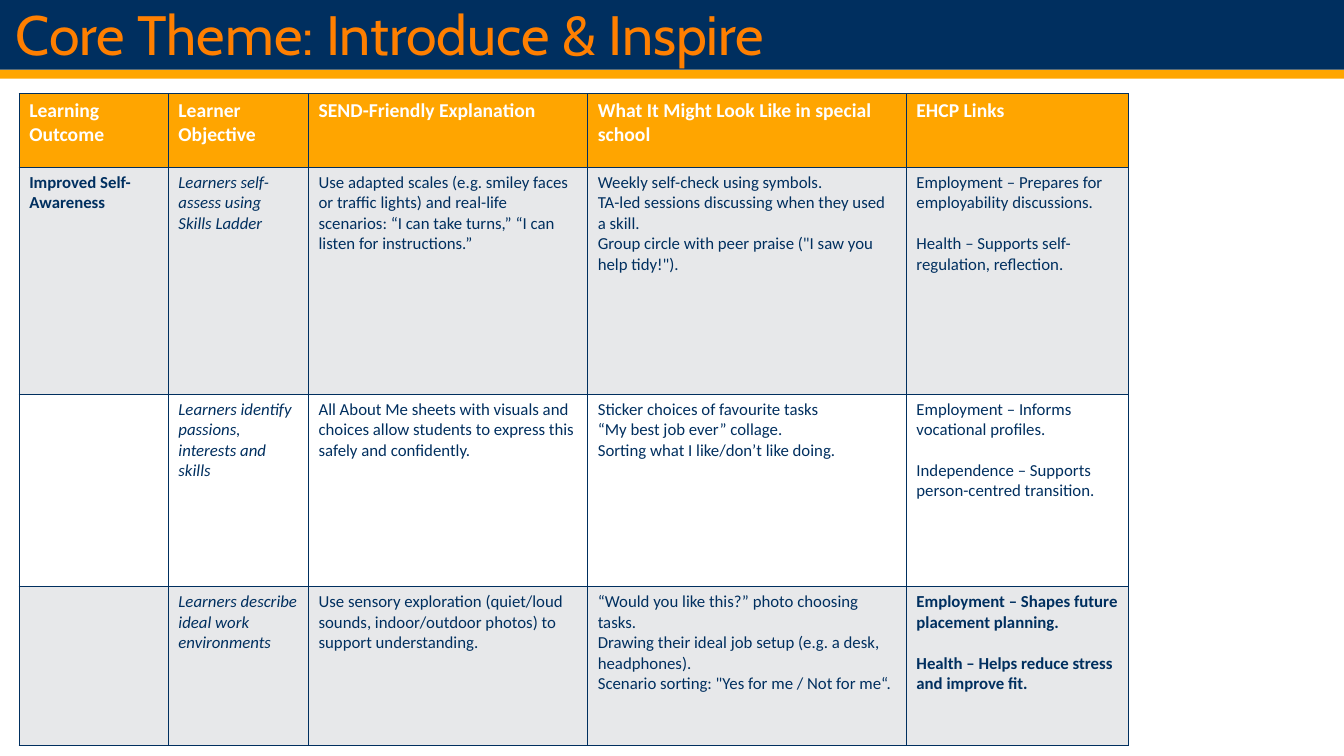
from lxml import etree
from pptx import Presentation
from pptx.dml.color import RGBColor
from pptx.enum.shapes import MSO_SHAPE
from pptx.enum.text import MSO_ANCHOR
from pptx.oxml.ns import qn
from pptx.util import Inches, Pt

RECTANGLE = MSO_SHAPE.RECTANGLE
MIDDLE = MSO_ANCHOR.MIDDLE
NAVY, ORANGE, TITLE_ORANGE = "002F5F", "FFA500", "FF7F00"
WHITE, GREY = "FFFFFF", "E7E8EA"


def color(hex_string):
    return RGBColor.from_string(hex_string)


def format_font(font, values):
    for name, value in values.items():
        if name == "color":
            font.color.rgb = color(value)
        else:
            setattr(font, name, value)


presentation = Presentation()
presentation.slide_width = Inches(13.33)
presentation.slide_height = Inches(7.5)
slide = presentation.slides.add_slide(presentation.slide_layouts[6])

# Header bands
for top, height, fill in [(0.69, 0.09, ORANGE), (0, 0.69, NAVY)]:
    band = slide.shapes.add_shape(
        RECTANGLE, 0, Inches(top), Inches(13.33), Inches(height))
    band.shadow.inherit = False
    band.fill.solid()
    band.fill.fore_color.rgb = color(fill)
    band.line.fill.background()

# Title
title = slide.shapes.add_textbox(
    Inches(0.06), Inches(0.12), Inches(11.53), Inches(0.5))
title.text_frame.word_wrap = True
title.text_frame.vertical_anchor = MIDDLE
paragraph = title.text_frame.paragraphs[0]
paragraph.text = "Core Theme: Introduce & Inspire"
paragraph.line_spacing = 0.9
format_font(paragraph.font,
            {"size": Pt(39.6), "name": "Cabin", "color": TITLE_ORANGE})

# Table content: one list per row, one line per paragraph
rows = [
    ["Learning Outcome", "Learner Objective", "SEND-Friendly Explanation",
     "What It Might Look Like in special school", "EHCP Links"],
    ["Improved Self-Awareness",
     "Learners self-assess using Skills Ladder",
     "Use adapted scales (e.g. smiley faces or traffic lights) and real-life "
     "scenarios: “I can take turns,” “I can listen for instructions.”",
     "Weekly self-check using symbols.\n"
     "TA-led sessions discussing when they used a skill.\n"
     'Group circle with peer praise ("I saw you help tidy!").',
     "Employment – Prepares for employability discussions.\n"
     "Health – Supports self-regulation, reflection."],
    ["",
     "Learners identify passions, interests and skills",
     "All About Me sheets with visuals and choices allow students to express "
     "this safely and confidently.",
     "Sticker choices of favourite tasks\n"
     "“My best job ever” collage.\n"
     "Sorting what I like/don’t like doing.",
     "Employment – Informs vocational profiles.\n"
     "Independence – Supports person-centred transition."],
    ["",
     "Learners describe ideal work environments",
     "Use sensory exploration (quiet/loud sounds, indoor/outdoor photos) to "
     "support understanding.",
     "“Would you like this?” photo choosing tasks.\n"
     "Drawing their ideal job setup (e.g. a desk, headphones).\n"
     'Scenario sorting: "Yes for me / Not for me“.',
     "Employment – Shapes future placement planning.\n"
     "Health – Helps reduce stress and improve fit."],
]
column_widths = [1.48, 1.39, 2.77, 3.16, 2.2]
row_heights = [0.73, 2.25, 1.91, 1.58]
row_fills = [ORANGE, GREY, WHITE, GREY]
OUTCOME, OBJECTIVE, LINKS = 0, 1, 4
last_row = len(rows) - 1

table = slide.shapes.add_table(
    len(row_heights), len(column_widths), Inches(0.19), Inches(0.93),
    Inches(sum(column_widths)), Inches(sum(row_heights))).table
for column, width in zip(table.columns, column_widths):
    column.width = Inches(width)
for row, height in zip(table.rows, row_heights):
    row.height = Inches(height)

for row_index, texts in enumerate(rows):
    header = row_index == 0
    for column_index, text in enumerate(texts):
        cell = table.cell(row_index, column_index)
        cell.text = text
        font_values = {
            "name": "Calibri",
            "size": Pt(14 if header else 12),
            "color": WHITE if header else NAVY,
            "bold": (header or column_index == OUTCOME
                     or (row_index == last_row and column_index == LINKS)),
            "italic": not header and column_index == OBJECTIVE,
        }
        for index, paragraph in enumerate(cell.text_frame.paragraphs):
            format_font(paragraph.font, font_values)
            if column_index == LINKS and index > 0:
                paragraph.space_before = Pt(14.6)

        # Borders come before the fill in the cell properties
        properties = cell._tc.get_or_add_tcPr()
        for side in ("a:lnL", "a:lnR", "a:lnT", "a:lnB"):
            border = etree.SubElement(properties, qn(side), w=str(Pt(1)))
            solid = etree.SubElement(border, qn("a:solidFill"))
            etree.SubElement(solid, qn("a:srgbClr"), val=NAVY)
        cell.fill.solid()
        cell.fill.fore_color.rgb = color(row_fills[row_index])

presentation.save("out.pptx")
